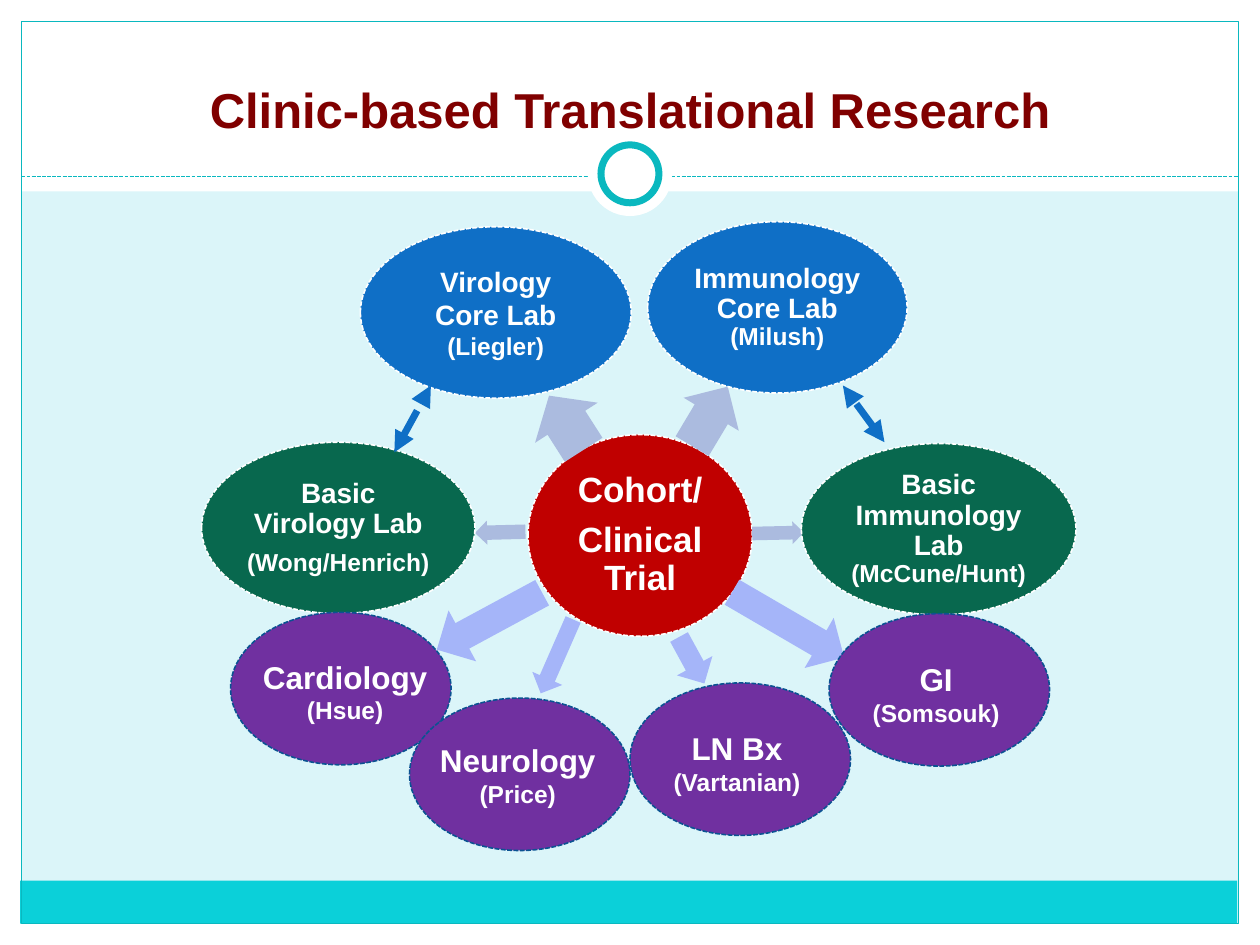
from math import sqrt

from lxml.etree import SubElement
from pptx import Presentation
from pptx.dml.color import RGBColor
from pptx.enum.dml import MSO_LINE
from pptx.enum.shapes import MSO_CONNECTOR, MSO_SHAPE
from pptx.enum.text import MSO_ANCHOR, MSO_AUTO_SIZE, PP_ALIGN
from pptx.oxml.ns import qn
from pptx.util import Inches, Pt

TITLE = "Clinic-based Translational Research"
WHITE, TEAL, BLUE, GREEN = "FFFFFF", "0AB8BF", "0F6FC6", "08684E"
PURPLE, PALE, LILAC, NAVY = "7030A0", "ABBBDF", "A5B5F9", "0B5292"
COLUMNS, ROWS = 10, 7.5
MARGIN = 0.17

BANDS = [
    ((0, ROWS - MARGIN, COLUMNS, MARGIN), WHITE),
    ((0, 0, COLUMNS, 1.52), WHITE),
    ((0, 0, MARGIN, ROWS), WHITE),
    ((COLUMNS - MARGIN, 0, MARGIN, ROWS), WHITE),
    ((0.16, 6.99, 9.66, 0.34), "0BD0D9"),
]

COHORT = {"at": (4.19, 3.45, 1.78, 1.6), "fill": "C00000", "spacing": 0.9, "after": 0.35,
          "inset": 0.03, "text": [("Cohort/", 20), ("Clinical Trial", 20)]}

CORE_LABS = [
    {"arrow": (5.36, 3.05, 0.55, 0.51, 300.9), "at": (5.14, 1.76, 2.06, 1.36), "fill": BLUE,
     "spacing": 0.9, "text": [("Immunology Core Lab", 16), ("(Milush)", 14)]},
    {"arrow": (5.97, 4.14, 0.41, 0.18, 358.8), "at": (6.36, 3.52, 2.18, 1.36), "fill": GREEN,
     "spacing": 0.9, "text": [("Basic Immunology Lab", 16), ("(McCune/Hunt)", 14)]},
    {"arrow": (4.24, 3.06, 0.51, 0.59, 237.4), "at": (2.86, 1.8, 2.15, 1.36), "fill": BLUE,
     "text": [("Virology", 16), ("Core Lab", 16), ("(Liegler)", 14)]},
    {"arrow": (3.77, 4.13, 0.4, 0.19, 178.5), "at": (1.6, 3.51, 2.17, 1.36), "fill": GREEN,
     "spacing": 0.9, "after": 0.35, "text": [("Basic Virology Lab", 16), ("(Wong/Henrich)", 14)]},
]

CLINIC_SIZE = (1.75, 1.21)
CLINIC_LABEL_SIZE = (1.56, 0.64)
CLINICS = [
    ("Cardiology", "(Hsue)", (1.83, 4.86), (0.13, 0.31), (3.41, 4.7, 0.95, 0.46, 151.6)),
    ("GI", "(Somsouk)", (6.58, 4.87), (0.07, 0.32), (5.74, 4.73, 1.03, 0.46, 30.2)),
    ("Neurology", "(Price)", (3.25, 5.54), (0.08, 0.29), (4.1, 5.08, 0.64, 0.26, 113.7)),
    ("LN Bx", "(Vartanian)", (5, 5.42), (0.07, 0.32), (5.28, 5.08, 0.42, 0.32, 61.4)),
]

EXCHANGES = [(3.13, 3.59, 3.42, 3.06), (7.02, 3.51, 6.69, 3.06)]


def color(hex_string):
    return RGBColor.from_string(hex_string)


def place(lengths):
    return [Inches(length) for length in lengths]


def set_line(line, hex_string, width, dash=None):
    line.color.rgb = color(hex_string)
    line.width = Pt(width)
    if dash:
        line.dash_style = dash


def add_block(shapes, kind, at, fill=None, outline=None):
    block = shapes.add_shape(kind, *place(at))
    block.shadow.inherit = False
    if fill:
        block.fill.solid()
        block.fill.fore_color.rgb = color(fill)
    else:
        block.fill.background()
    if outline:
        set_line(block.line, *outline)
    else:
        block.line.fill.background()
    return block


def add_arrow(shapes, at, fill, shaft=0.5):
    arrow = add_block(shapes, MSO_SHAPE.RIGHT_ARROW, at[:4], fill)
    arrow.rotation = at[4]
    arrow.adjustments[0] = shaft


def add_label(shapes, at, lines, spacing=None, after=0, inset=None):
    frame = shapes.add_textbox(*place(at)).text_frame
    frame.word_wrap = True
    if inset is None:
        frame.auto_size = MSO_AUTO_SIZE.SHAPE_TO_FIT_TEXT
    else:
        frame.vertical_anchor = MSO_ANCHOR.MIDDLE
        frame.margin_left = frame.margin_right = Inches(inset)
        frame.margin_top = frame.margin_bottom = Inches(inset)
    frame.text = "\n".join(words for words, size in lines)
    for paragraph, (words, size) in zip(frame.paragraphs, lines):
        paragraph.alignment = PP_ALIGN.CENTER
        if spacing:
            paragraph.line_spacing = spacing
        if after:
            paragraph.space_after = Pt(size * after)
        set_font(paragraph.font, size, WHITE)


def set_font(font, size, hex_string):
    font.name = "Arial"
    font.size = Pt(size)
    font.bold = True
    font.color.rgb = color(hex_string)


def add_lab(shapes, lab):
    left, top, width, height = lab["at"]
    add_block(shapes, MSO_SHAPE.OVAL, lab["at"], lab["fill"], (WHITE, 0.9, MSO_LINE.SQUARE_DOT))
    inner_width, inner_height = width / sqrt(2), height / sqrt(2)
    inner = (left + (width - inner_width) / 2, top + (height - inner_height) / 2,
             inner_width, inner_height)
    add_label(shapes, inner, lab["text"], lab.get("spacing"), lab.get("after", 0),
              lab.get("inset", 0.02))


def add_line(shapes, ends, hex_string, width, dash, heads=()):
    connector = shapes.add_connector(MSO_CONNECTOR.STRAIGHT, *place(ends))
    set_line(connector.line, hex_string, width, dash)
    outline = connector.line._get_or_add_ln()
    for head in heads:
        SubElement(outline, qn(head), type="triangle")
    SubElement(connector._element.spPr, qn("a:effectLst"))


def add_frame(shapes):
    for at, fill in BANDS:
        add_block(shapes, MSO_SHAPE.RECTANGLE, at, fill)
    border = (MARGIN, MARGIN, COLUMNS - 2 * MARGIN, ROWS - 2 * MARGIN)
    add_block(shapes, MSO_SHAPE.RECTANGLE, border, outline=(TEAL, 0.75))
    add_line(shapes, (MARGIN, 1.4, COLUMNS - MARGIN, 1.4), TEAL, 0.75, MSO_LINE.SQUARE_DOT)
    for diameter, outline in [(0.67, None), (0.46, (TEAL, 4))]:
        at = ((COLUMNS - diameter) / 2, 1.38 - diameter / 2, diameter, diameter)
        add_block(shapes, MSO_SHAPE.OVAL, at, WHITE, outline)


def add_title(shapes):
    title = shapes.title
    title.left, title.top, title.width, title.height = place((0.75, 0.27, 8.5, 0.88))
    title.text_frame.text = TITLE
    title.text_frame.vertical_anchor = MSO_ANCHOR.BOTTOM
    paragraph = title.text_frame.paragraphs[0]
    paragraph.alignment = PP_ALIGN.CENTER
    set_font(paragraph.font, 28, "800000")
    shapes._spTree.append(title._element)


def main():
    deck = Presentation()
    deck.slide_width, deck.slide_height = place((COLUMNS, ROWS))
    slide = deck.slides.add_slide(deck.slide_layouts[5])
    slide.background.fill.solid()
    slide.background.fill.fore_color.rgb = color("DBF5F9")
    shapes = slide.shapes
    add_frame(shapes)
    add_title(shapes)

    core = shapes.add_group_shape().shapes
    add_lab(core, COHORT)
    for lab in CORE_LABS:
        add_arrow(core, lab["arrow"], PALE, 0.6)
        add_lab(core, lab)

    for name, lead, corner, offset, arrow in CLINICS:
        add_arrow(shapes, arrow, LILAC)
        clinic = shapes.add_group_shape().shapes
        add_block(clinic, MSO_SHAPE.OVAL, corner + CLINIC_SIZE, PURPLE,
                  (NAVY, 0.9, MSO_LINE.SQUARE_DOT))
        label_corner = (corner[0] + offset[0], corner[1] + offset[1])
        add_label(clinic, label_corner + CLINIC_LABEL_SIZE, [(name, 18), (lead, 14)])

    for ends in EXCHANGES:
        add_line(shapes, ends, BLUE, 4, MSO_LINE.DASH, ("a:headEnd", "a:tailEnd"))
    deck.save("out.pptx")


if __name__ == "__main__":
    main()
